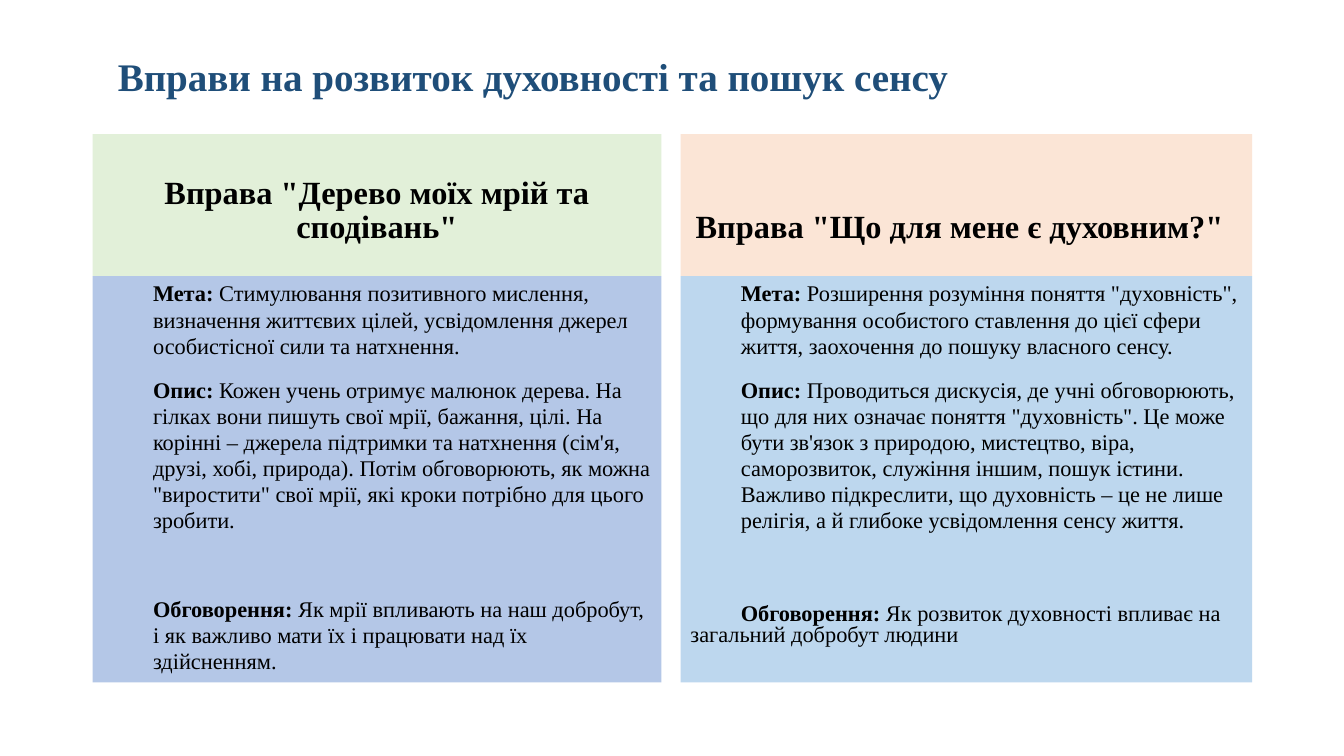
from pptx import Presentation
from pptx.dml.color import RGBColor
from pptx.enum.shapes import MSO_SHAPE
from pptx.enum.text import MSO_ANCHOR, PP_ALIGN
from pptx.util import Inches, Pt

RECTANGLE = MSO_SHAPE.RECTANGLE
TOP, MIDDLE, BOTTOM = MSO_ANCHOR.TOP, MSO_ANCHOR.MIDDLE, MSO_ANCHOR.BOTTOM
LEFT, CENTER = PP_ALIGN.LEFT, PP_ALIGN.CENTER

NAVY = RGBColor(0x1F, 0x4E, 0x79)
BLACK = RGBColor(0x00, 0x00, 0x00)
GREEN = RGBColor(0xE2, 0xF0, 0xD9)
PEACH = RGBColor(0xFB, 0xE5, 0xD6)
BLUE = RGBColor(0xB4, 0xC7, 0xE7)
SKY = RGBColor(0xBD, 0xD7, 0xEE)

FONT = "Times New Roman"
COLUMNS = [(0.92, 5.64), (6.75, 5.67)]
HEADING_ROW = (1.33, 1.41)
BODY_ROW = (2.74, 4.03)
INDENT = 0.5

BODY_FORMAT = {"line_spacing": 0.97, "space_before": Pt(5), "space_after": Pt(8)}
HANGING = (INDENT, 0)
FIRST_LINE = (0, INDENT)

TITLE = "Вправи на розвиток духовності та пошук сенсу"
EXERCISES = [
    {
        "heading": "Вправа \"Дерево моїх мрій та сподівань\"",
        "align": CENTER,
        "inset": 0.1,
        "fills": (GREEN, BLUE),
        "parts": [
            ("Мета:", " Стимулювання позитивного мислення, визначення життєвих цілей, "
             "усвідомлення джерел особистісної сили та натхнення."),
            ("Опис:", " Кожен учень отримує малюнок дерева. На гілках вони пишуть свої мрії, "
             "бажання, цілі. На корінні – джерела підтримки та натхнення (сім'я, друзі, хобі, "
             "природа). Потім обговорюють, як можна \"виростити\" свої мрії, які кроки "
             "потрібно для цього зробити."),
            ("Обговорення:", " Як мрії впливають на наш добробут, і як важливо мати їх "
             "і працювати над їх здійсненням."),
        ],
        "closing": {"space_before": Pt(37)},
        "closing_indent": HANGING,
    },
    {
        "heading": "Вправа \"Що для мене є духовним?\"",
        "align": LEFT,
        "inset": 0.15,
        "fills": (PEACH, SKY),
        "parts": [
            ("Мета:", " Розширення розуміння поняття \"духовність\", формування особистого "
             "ставлення до цієї сфери життя, заохочення до пошуку власного сенсу."),
            ("Опис:", " Проводиться дискусія, де учні обговорюють, що для них означає поняття "
             "\"духовність\". Це може бути зв'язок з природою, мистецтво, віра, саморозвиток, "
             "служіння іншим, пошук істини. Важливо підкреслити, що духовність – це не лише "
             "релігія, а й глибоке усвідомлення сенсу життя."),
            ("Обговорення:", " Як розвиток духовності впливає на загальний добробут людини"),
        ],
        "closing": {"space_before": Pt(42), "line_spacing": 0.8},
        "closing_indent": FIRST_LINE,
    },
]


def apply(target, values):
    """Set every named attribute of the target."""
    for name, value in values.items():
        setattr(target, name, value)


def add_span(para, text, size, color=BLACK, bold=True):
    """Append a formatted span to a paragraph."""
    span = para.add_run()
    span.text = text
    apply(span.font, {"name": FONT, "size": Pt(size), "bold": bold})
    span.font.color.rgb = color


def set_frame(box, anchor, left=0.1, bottom=0.05):
    """Prepare the text frame of a box and return it."""
    frame = box.text_frame
    apply(frame, {
        "word_wrap": True, "vertical_anchor": anchor,
        "margin_left": Inches(left), "margin_right": Inches(0.1),
        "margin_top": Inches(0.05), "margin_bottom": Inches(bottom),
    })
    return frame


def add_panel(page, column, row, fill):
    """Draw a borderless filled rectangle in a grid cell."""
    (left, width), (top, height) = column, row
    box = page.shapes.add_shape(RECTANGLE, *map(Inches, (left, top, width, height)))
    box.shadow.inherit = False
    box.fill.solid()
    box.fill.fore_color.rgb = fill
    box.line.fill.background()
    return box


def add_title(page):
    """Write the slide title."""
    box = page.shapes.add_textbox(*map(Inches, (1.07, 0.39, 8.92, 0.77)))
    para = set_frame(box, MIDDLE, bottom=0.1).paragraphs[0]
    add_span(para, TITLE, 27.9, NAVY)


def add_heading(page, column, exercise):
    """Draw the coloured heading of one exercise."""
    box = add_panel(page, column, HEADING_ROW, exercise["fills"][0])
    para = set_frame(box, BOTTOM, exercise["inset"], 0.31).paragraphs[0]
    apply(para, {"alignment": exercise["align"], "line_spacing": 0.87})
    add_span(para, exercise["heading"], 23.1)


def add_body(page, column, exercise):
    """Draw the description panel of one exercise."""
    box = add_panel(page, column, BODY_ROW, exercise["fills"][1])
    frame = set_frame(box, TOP)
    last = len(exercise["parts"]) - 1
    for index, (label, text) in enumerate(exercise["parts"]):
        para = frame.add_paragraph() if index else frame.paragraphs[0]
        margin, indent = exercise["closing_indent"] if index == last else HANGING
        properties = para._p.get_or_add_pPr()
        properties.set("marL", str(Inches(margin)))
        properties.set("indent", str(Inches(indent)))
        apply(para, BODY_FORMAT | {"alignment": LEFT})
        if index == 0:
            para.space_before = Pt(0)
        if index == last:
            apply(para, exercise["closing"])
        add_span(para, label, 16)
        add_span(para, text, 16, bold=False)


def main():
    """Build and save the deck."""
    deck = Presentation()
    apply(deck, {"slide_width": Inches(13.33), "slide_height": Inches(7.5)})
    page = deck.slides.add_slide(deck.slide_layouts[6])
    add_title(page)
    for column, exercise in zip(COLUMNS, EXERCISES):
        add_heading(page, column, exercise)
        add_body(page, column, exercise)
    deck.save("out.pptx")


if __name__ == "__main__":
    main()
